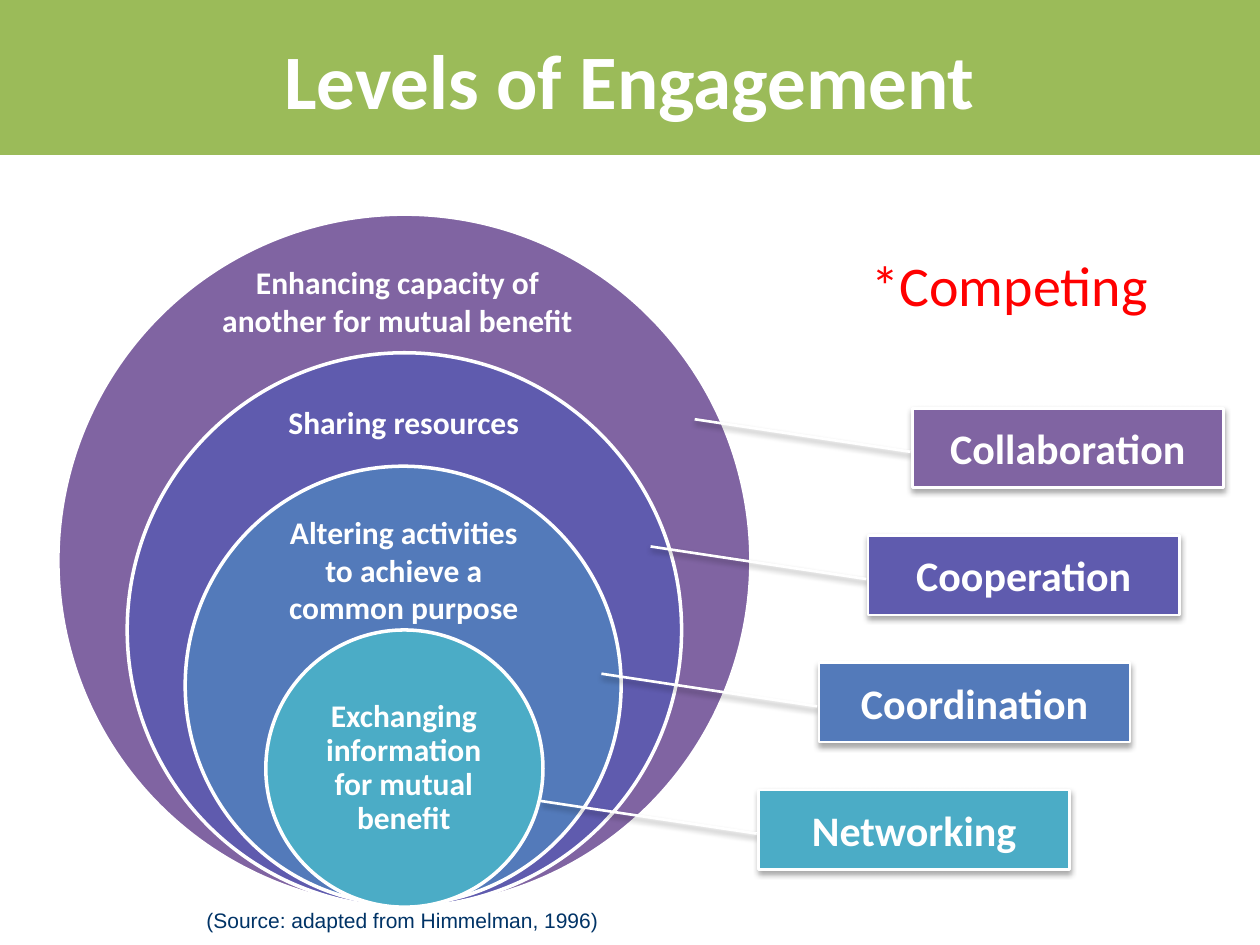
import pptx
import pptx.dml.color
import pptx.enum.shapes
import pptx.enum.text
import pptx.oxml
import pptx.oxml.ns
import pptx.util
from pptx.util import Inches

SHAPES = pptx.enum.shapes.MSO_SHAPE
ANCHOR = pptx.enum.text.MSO_ANCHOR
ALIGN = pptx.enum.text.PP_ALIGN
AUTO_SIZE = pptx.enum.text.MSO_AUTO_SIZE

WHITE = "FFFFFF"

# Outermost first: label, colour, circle box, description, description box
LEVELS = [
    ("Collaboration", "8064A2", (0.46, 1.7, 5.5, 5.5),
     "Enhancing capacity of another for mutual benefit", (1.61, 2.04, 3.09, 0.71)),
    ("Cooperation", "5F5BAE", (1.01, 2.8, 4.4, 4.4),
     "Sharing resources", (2.18, 3.15, 2.05, 0.4)),
    ("Coordination", "537ABA", (1.47, 3.7, 3.46, 3.48),
     "Altering activities to achieve a common purpose", (2.18, 4.02, 2.05, 1.01)),
    ("Networking", "4BACC6", (2.11, 5, 2.2, 2.2),
     "Exchanging information for mutual benefit", (2.43, 5.55, 1.55, 1.1)),
]
CALLOUT_LEFTS = [7.24, 6.89, 6.5, 6.02]
CALLOUT_TOP, CALLOUT_STEP = 3.24, 1.01
CALLOUT_SIZE = (2.47, 0.63)
CALLOUT_LINE = [0.549, -0.006, 0.139, -0.699]


def color(value):
    return pptx.dml.color.RGBColor.from_string(value)


def write(shape, text, size, fill=WHITE, bold=False, font="Calibri",
          align=ALIGN.CENTER, anchor=ANCHOR.MIDDLE, spacing=None, wrap=True):
    frame = shape.text_frame
    frame.word_wrap = wrap
    frame.vertical_anchor = anchor
    frame.text = text
    paragraph = frame.paragraphs[0]
    paragraph.alignment = align
    if spacing:
        paragraph.line_spacing = spacing
    run_font = paragraph.runs[0].font
    run_font.name = font
    run_font.size = pptx.util.Pt(size)
    run_font.bold = bold
    run_font.color.rgb = color(fill)


def add_shape(slide, kind, box, fill, line_width=None):
    shape = slide.shapes.add_shape(kind, *map(Inches, box))
    shape.fill.solid()
    shape.fill.fore_color.rgb = color(fill)
    if line_width:
        shape.line.color.rgb = color(WHITE)
        shape.line.width = pptx.util.Pt(line_width)
    else:
        shape.line.fill.background()
    shape.shadow.inherit = False
    return shape


def add_text(slide, box, text, size, **formats):
    shape = slide.shapes.add_textbox(*map(Inches, box))
    write(shape, text, size, **formats)
    return shape


def add_shadow(shape):
    effects = shape._element.spPr.find(pptx.oxml.ns.qn("a:effectLst"))
    effects.append(pptx.oxml.parse_xml(
        f'<a:outerShdw {pptx.oxml.ns.nsdecls("a")} blurRad="40000" dist="23000" '
        'dir="5400000" rotWithShape="0"><a:srgbClr val="000000">'
        '<a:alpha val="35000"/></a:srgbClr></a:outerShdw>'))


def add_header(slide, box):
    left, top, width, height = box
    band = add_shape(slide, SHAPES.RECTANGLE, (left, top - 0.02, width, height), "9BBB59")
    title = slide.shapes.title
    title.left, title.top, title.width, title.height = map(Inches, box)
    write(title, "Levels of Engagement", 44, bold=True)
    title._element.addprevious(band._element)  # band goes behind the title


def add_circles(slide):
    for _, fill, circle_box, _, _ in LEVELS:
        add_shape(slide, SHAPES.OVAL, circle_box, fill, line_width=2)
    for _, _, _, description, text_box in LEVELS[:-1]:
        add_text(slide, text_box, description, 18, bold=True, anchor=ANCHOR.TOP)
    # The innermost description is centred in its circle
    _, _, _, description, text_box = LEVELS[-1]
    inner = add_text(slide, text_box, description, 18, bold=True, spacing=0.9)
    frame = inner.text_frame
    frame.margin_left = frame.margin_right = Inches(0.14)
    frame.margin_top = frame.margin_bottom = Inches(0.14)


def add_callout(slide, box, label, fill):
    callout = add_shape(slide, SHAPES.LINE_CALLOUT_1, box, fill, line_width=1.5)
    for index, value in enumerate(CALLOUT_LINE):
        callout.adjustments[index] = value
    add_shadow(callout)
    write(callout, label, 24, bold=True)


def add_notes_text(slide):
    competing = add_text(slide, (6.82, 1.94, 2.68, 0.64), "*Competing", 32,
                         fill="FF0000", align=ALIGN.LEFT, anchor=ANCHOR.TOP)
    source = add_text(slide, (1.54, 7.15, 3.34, 0.3),
                      "(Source: adapted from Himmelman, 1996)", 12, fill="003366",
                      font="Arial", align=ALIGN.LEFT, anchor=ANCHOR.TOP, wrap=False)
    for shape in (competing, source):
        shape.text_frame.auto_size = AUTO_SIZE.SHAPE_TO_FIT_TEXT


def main():
    presentation = pptx.Presentation()
    presentation.slide_width = Inches(10)
    presentation.slide_height = Inches(7.5)
    slide = presentation.slides.add_slide(presentation.slide_layouts[5])

    add_header(slide, (0, 0, 10, 1.25))
    add_circles(slide)
    # Callouts, stepping down from the outermost level
    for index, (level, left) in enumerate(zip(LEVELS, CALLOUT_LEFTS)):
        top = CALLOUT_TOP + index * CALLOUT_STEP
        add_callout(slide, (left, top, *CALLOUT_SIZE), level[0], level[1])
    add_notes_text(slide)

    presentation.save("out.pptx")


if __name__ == "__main__":
    main()
